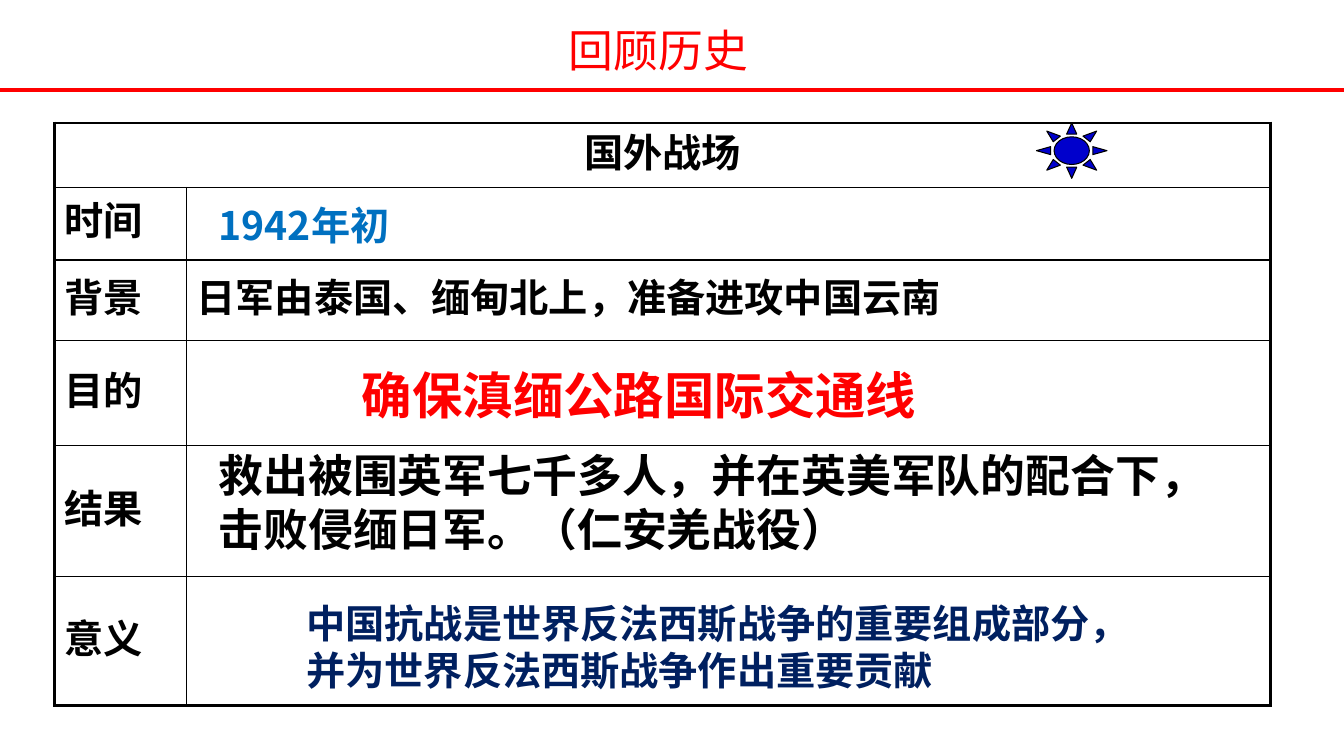
from dataclasses import dataclass

import lxml.etree
import pptx
import pptx.dml.color
import pptx.enum.shapes
import pptx.enum.text
import pptx.oxml.ns
import pptx.util

FONT = "Noto Sans CJK SC"
BLACK, RED = "000000", "FF0000"
LINE_PITCH = 1.19
ALIGN = pptx.enum.text.PP_ALIGN
ANCHOR = pptx.enum.text.MSO_ANCHOR

prs = pptx.Presentation()
prs.slide_width = pptx.util.Inches(13.33)
prs.slide_height = pptx.util.Inches(7.5)


@dataclass
class Box:
    """Left, top, width and height as percent of the slide."""
    left: float
    top: float
    width: float
    height: float

    def emu(self) -> tuple[int, int, int, int]:
        return (across(self.left), down(self.top),
                across(self.width), down(self.height))


@dataclass
class Answer:
    text: str
    box: Box
    size: int
    color: str
    wrap: bool = True
    before: float = 0


ROWS = [("国外战场", ""), ("时间", ""),
        ("背景", "日军由泰国、缅甸北上，准备进攻中国云南"),
        ("目的", ""), ("结果", ""), ("意义", "")]
ROW_HEIGHTS = [8.53, 9.6, 10.67, 13.87, 17.33, 17.07]
COL_WIDTHS = [9.83, 80.65]
TABLE_BOX = Box(4.05, 16.27, sum(COL_WIDTHS), sum(ROW_HEIGHTS))
TITLE_BOX = Box(41.56, 2.4, 52.96, 8.53)
SUN_BOX = Box(77.12, 16.27, 5.25, 7.33)
RULE_TOP = 11.87

ANSWERS = [
    Answer("确保滇缅公路国际交通线", Box(26.18, 47.6, 43.29, 9.47), 36, RED, wrap=False),
    Answer("救出被围英军七千多人，并在英美军队的配合下，击败侵缅日军。（仁安羌战役）",
           Box(15.53, 58.67, 73.52, 15.73), 32, BLACK),
    Answer("中国抗战是世界反法西斯战争的重要组成部分，并为世界反法西斯战争作出重要贡献",
           Box(22.06, 78.67, 62.12, 13.87), 28, "002060"),
    Answer("1942年初", Box(15.53, 26, 18.38, 7.6), 28, "0070C0", before=5.6),
]


def across(percent: float) -> int:
    return round(prs.slide_width * percent / 100)


def down(percent: float) -> int:
    return round(prs.slide_height * percent / 100)


def rgb(color: str) -> pptx.dml.color.RGBColor:
    return pptx.dml.color.RGBColor.from_string(color)


def write(tf, text: str, *, size: int = 28, color: str = BLACK, bold: bool = True,
          align=ALIGN.LEFT, before: float = 0) -> None:
    p = tf.paragraphs[0]
    p.alignment = align
    p.space_before = pptx.util.Pt(before)
    p.line_spacing = pptx.util.Pt(round(size * LINE_PITCH, 1))
    r = p.add_run()
    r.text = text
    r.font.name = FONT
    r.font.size = pptx.util.Pt(size)
    r.font.bold = bold
    r.font.color.rgb = rgb(color)
    ea = lxml.etree.SubElement(r.font._element, pptx.oxml.ns.qn("a:ea"))
    ea.set("typeface", FONT)


def set_borders(cell, widths: dict[str, float]) -> None:
    tcPr = cell._tc.get_or_add_tcPr()
    for side, width in widths.items():
        ln = lxml.etree.SubElement(tcPr, pptx.oxml.ns.qn(f"a:ln{side}"),
                                   w=str(pptx.util.Pt(width)))
        fill = lxml.etree.SubElement(ln, pptx.oxml.ns.qn("a:solidFill"))
        lxml.etree.SubElement(fill, pptx.oxml.ns.qn("a:srgbClr"), val=BLACK)


def add_history_table(slide) -> None:
    n_rows, n_cols = len(ROWS), len(COL_WIDTHS)
    table = slide.shapes.add_table(n_rows, n_cols, *TABLE_BOX.emu()).table
    table.first_row = table.horz_banding = False
    for col, width in zip(table.columns, COL_WIDTHS):
        col.width = across(width)
    for row, height in zip(table.rows, ROW_HEIGHTS):
        row.height = down(height)
    table.cell(0, 0).merge(table.cell(0, n_cols - 1))
    for i, texts in enumerate(ROWS):
        for j, text in enumerate(texts):
            cell = table.cell(i, j)
            # Thick outer frame, thin inner rules
            outer = {"L": j == 0, "R": j == n_cols - 1 or i == 0,
                     "T": i == 0, "B": i == n_rows - 1}
            set_borders(cell, {side: 2.25 if edge else 1 for side, edge in outer.items()})
            cell.fill.background()
            cell.vertical_anchor = ANCHOR.MIDDLE
            if text:
                write(cell.text_frame, text, before=5.6,
                      align=ALIGN.CENTER if i == 0 else ALIGN.LEFT)


def add_answer(slide, answer: Answer) -> None:
    tf = slide.shapes.add_textbox(*answer.box.emu()).text_frame
    tf.word_wrap = answer.wrap
    write(tf, answer.text, size=answer.size, color=answer.color, before=answer.before)


def add_title(slide) -> None:
    sp = slide.shapes.title
    sp.left, sp.top, sp.width, sp.height = TITLE_BOX.emu()
    tf = sp.text_frame
    tf.auto_size = pptx.enum.text.MSO_AUTO_SIZE.NONE
    tf.vertical_anchor = ANCHOR.TOP
    write(tf, "回顾历史", size=32, color=RED, bold=False)


def add_sun(slide) -> None:
    sp = slide.shapes.add_shape(pptx.enum.shapes.MSO_SHAPE.SUN, *SUN_BOX.emu())
    sp.shadow.inherit = False
    sp.fill.solid()
    sp.fill.fore_color.rgb = rgb("0000CC")
    sp.line.color.rgb = rgb(BLACK)
    sp.line.width = pptx.util.Pt(0.75)


def add_rule(slide) -> None:
    y = down(RULE_TOP)
    line = slide.shapes.add_connector(pptx.enum.shapes.MSO_CONNECTOR.STRAIGHT,
                                      0, y, prs.slide_width, y)
    line.line.color.rgb = rgb(RED)
    line.line.width = pptx.util.Pt(3)
    lxml.etree.SubElement(line._element.spPr, pptx.oxml.ns.qn("a:effectLst"))


def main() -> None:
    slide = prs.slides.add_slide(prs.slide_layouts.get_by_name("Title Only"))
    # Heading
    add_title(slide)
    add_rule(slide)
    # Table with the answers laid over it
    add_history_table(slide)
    for answer in ANSWERS:
        add_answer(slide, answer)
    add_sun(slide)
    prs.save("out.pptx")


if __name__ == "__main__":
    main()
